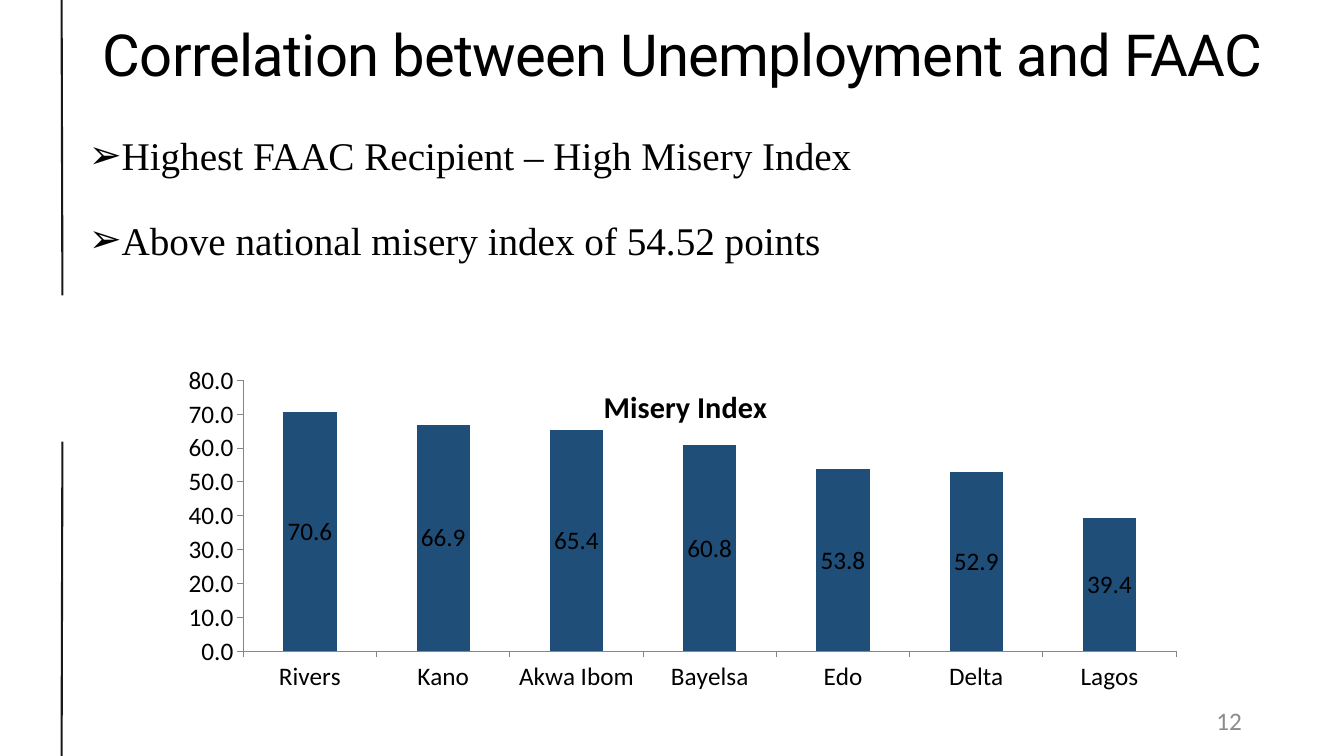
from lxml import etree
from pptx import Presentation
from pptx.chart.data import CategoryChartData as Data
from pptx.dml.color import RGBColor as RGB
from pptx.enum.chart import XL_CHART_TYPE as Kind
from pptx.enum.chart import XL_LABEL_POSITION as Spot
from pptx.enum.chart import XL_TICK_MARK as Tick
from pptx.enum.shapes import MSO_CONNECTOR as Link
from pptx.enum.text import MSO_ANCHOR as Anchor
from pptx.enum.text import MSO_AUTO_SIZE as Fit
from pptx.enum.text import PP_ALIGN as Align
from pptx.oxml.ns import qn
from pptx.util import Pt

HUES = {"ink": "000000", "bar": "1F4E79", "axis": "868686", "page": "8C8C8C"}
WIDE, HIGH = 960, 540
STATES = ["Rivers", "Kano", "Akwa Ibom", "Bayelsa", "Edo", "Delta", "Lagos"]
SCORES = [70.6, 66.9, 65.4, 60.8, 53.8, 52.9, 39.4]
POINTS = [
    "Highest FAAC Recipient – High Misery Index",
    "Above national misery index of 54.52 points",
]


def hue(name):
    """Return the named colour."""
    return RGB.from_string(HUES[name])


def style(font, face, size, name="ink", bold=False):
    """Set the face, size, colour and weight of a font."""
    font.name, font.size, font.bold = face, Pt(size), bold
    font.color.rgb = hue(name)


def move(shape, box):
    """Put a shape in its box."""
    shape.left, shape.top, shape.width, shape.height = map(Pt, box)


def add_rule(slide, box):
    """Draw the side rule from corner to corner of its box."""
    x, y, w, h = box
    rule = slide.shapes.add_connector(
        Link.STRAIGHT, Pt(x), Pt(y), Pt(x + w), Pt(y + h))
    rule.line.width = Pt(1.5)
    rule.line.color.rgb = hue("ink")
    props = rule._element.spPr
    tint = next(props.iter(qn("a:srgbClr")))
    etree.SubElement(tint, qn("a:alpha"), val="90000")
    etree.SubElement(props, qn("a:effectLst"))


def add_title(slide, box):
    """Fill the title placeholder."""
    title = slide.shapes.title
    move(title, box)
    frame = title.text_frame
    frame.text = "Correlation between Unemployment and FAAC"
    frame.auto_size = Fit.NONE
    frame.vertical_anchor = Anchor.MIDDLE
    para = frame.paragraphs[0]
    para.alignment, para.line_spacing = Align.LEFT, 0.85
    style(para.font, "Roboto", 41.4)
    para.runs[0]._r.get_or_add_rPr().set("spc", "-50")


def add_points(slide, box):
    """Fill the body placeholder with arrow bullets."""
    body = slide.placeholders[1]
    move(body, box)
    frame = body.text_frame
    frame.text = "\n".join(POINTS)
    frame.auto_size = Fit.NONE
    for i, para in enumerate(frame.paragraphs):
        props = para._p.get_or_add_pPr()
        props.set("marL", str(Pt(18)))
        props.set("indent", str(-Pt(18)))
        etree.SubElement(props, qn("a:buChar"), char="➢")
        para.line_spacing = 1.5
        para.space_before = Pt(10 if i else 0)
        style(para.font, "Times New Roman", 28)


def add_page(slide, box):
    """Write the page number."""
    frame = slide.shapes.add_textbox(*map(Pt, box)).text_frame
    frame.word_wrap = True
    frame.vertical_anchor = Anchor.MIDDLE
    para = frame.paragraphs[0]
    para.text, para.alignment = "12", Align.RIGHT
    style(para.font, "Calibri", 18, "page")


def lay_out(part, index, marks):
    """Give a chart part a manual layout."""
    for old in part.findall(qn("c:layout")):
        part.remove(old)
    lay = etree.Element(qn("c:layout"))
    spec = etree.SubElement(lay, qn("c:manualLayout"))
    for key, val in marks.items():
        etree.SubElement(spec, qn("c:" + key), val=str(val))
    part.insert(index, lay)


def add_bars(slide, box):
    """Chart the misery index by state."""
    data = Data(number_format="0.0")
    data.categories = STATES
    data.add_series("Misery Index", SCORES)
    chart = slide.shapes.add_chart(
        Kind.COLUMN_STACKED, *map(Pt, box), data).chart
    style(chart.font, "Calibri", 18)
    chart.has_legend = False

    head = chart.chart_title
    head.text_frame.text = "Misery Index"
    style(head.text_frame.paragraphs[0].font, "Calibri", 21.6, bold=True)
    edge = {"xMode": "edge", "yMode": "edge"}
    lay_out(head._element, 1, {**edge, "x": 0.42, "y": 0.06})
    head._element.find(qn("c:overlay")).set("val", "1")
    area = next(chart._chartSpace.iter(qn("c:plotArea")))
    lay_out(area, 0, {"layoutTarget": "inner", **edge,
                      "x": 0.07, "y": 0.06, "w": 0.92, "h": 0.72})

    for axis in (chart.category_axis, chart.value_axis):
        axis.has_major_gridlines = False
        axis.major_tick_mark = Tick.OUTSIDE
        axis.minor_tick_mark = Tick.NONE
        axis.format.line.color.rgb = hue("axis")
        axis.format.line.width = Pt(0.75)
    scale = chart.value_axis
    scale.minimum_scale, scale.maximum_scale, scale.major_unit = 0, 80, 10
    scale.tick_labels.number_format = "0.0"
    scale.tick_labels.number_format_is_linked = False

    plot = chart.plots[0]
    plot.vary_by_categories = False
    plot.gap_width, plot.overlap = 150, 100
    fill = plot.series[0].format.fill
    fill.solid()
    fill.fore_color.rgb = hue("bar")
    plot.has_data_labels = True
    tags = plot.data_labels
    tags.show_value = True
    tags.position = Spot.CENTER
    tags.number_format, tags.number_format_is_linked = "0.0", False
    style(tags.font, "Calibri", 18)


def main():
    """Build and save the slide."""
    deck = Presentation()
    deck.slide_width, deck.slide_height = Pt(WIDE), Pt(HIGH)
    slide = deck.slides.add_slide(deck.slide_layouts[1])
    add_rule(slide, (44, 0, 0.6, 211))
    add_rule(slide, (44.6, 315.4, -0.6, HIGH - 315.4))
    add_title(slide, (66.2, 11.5, 869, 60.5))
    add_points(slide, (56.2, 73.4, 803.5, 451.4))
    add_page(slide, (678.2, 500.4, 216, 28.8))
    add_bars(slide, (123.1, 255.6, 724.3, 268.6))
    deck.save("out.pptx")


if __name__ == "__main__":
    main()
